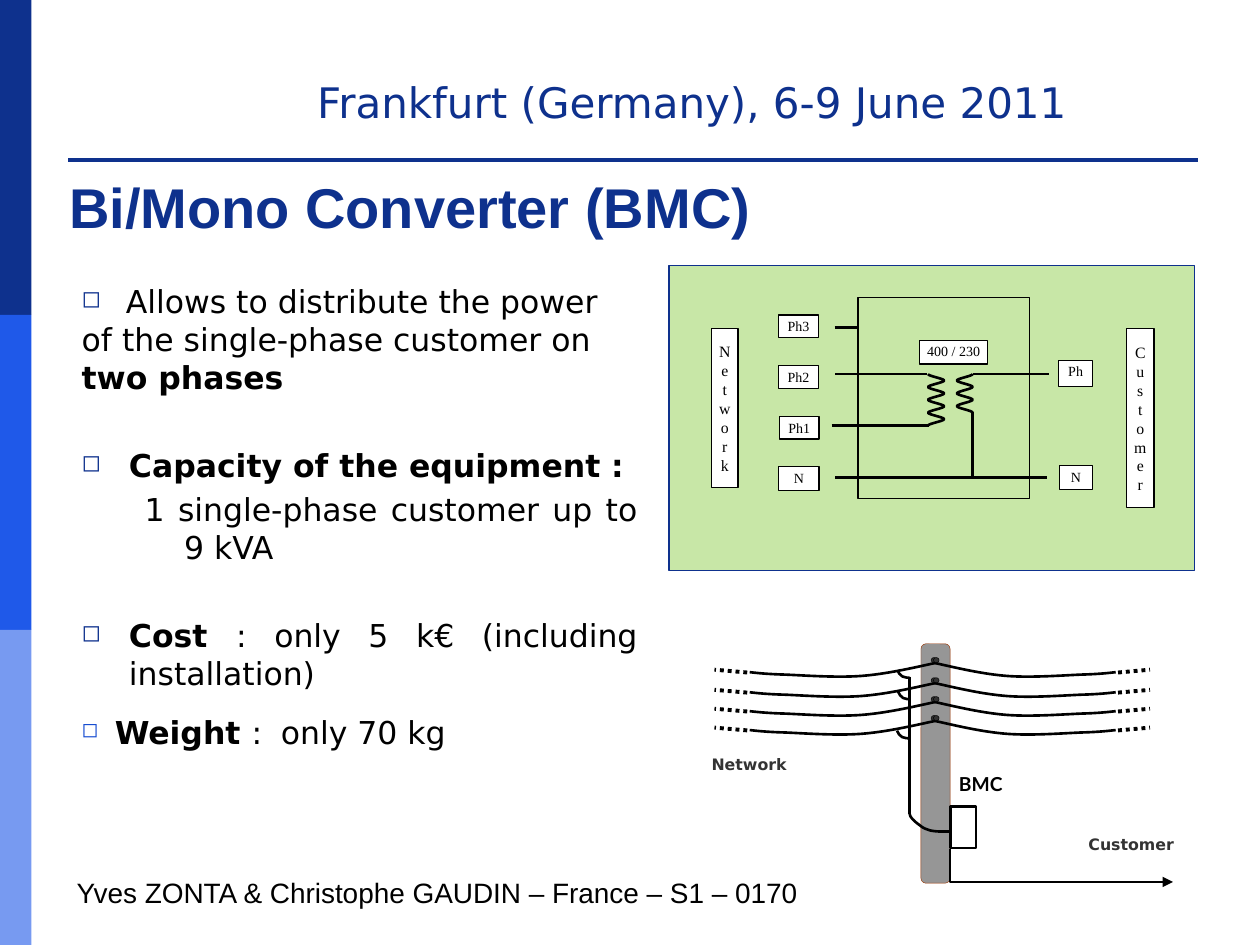
from dataclasses import dataclass

from lxml import etree
from pptx import Presentation
from pptx import util as u
from pptx.dml.color import RGBColor
from pptx.enum import dml, shapes, text
from pptx.oxml import ns

Pt = u.Pt
RECT = shapes.MSO_SHAPE.RECTANGLE
OVAL = shapes.MSO_SHAPE.OVAL
ROUNDED = shapes.MSO_SHAPE.ROUNDED_RECTANGLE


@dataclass(frozen=True)
class Theme:
    navy: str = "0E318D"
    blue: str = "1F59E9"
    sky: str = "779AF1"
    bullet: str = "154BD1"
    green: str = "92D050"
    pole: str = "969696"
    rust: str = "993300"
    dark: str = "333333"
    black: str = "000000"
    white: str = "FFFFFF"
    body_font: str = "DejaVu Sans"
    title_font: str = "Arial"
    label_font: str = "Times New Roman"
    tag_font: str = "Lato"
    title: float = 32
    header: float = 24
    body: float = 18
    footer: float = 16
    tag: float = 11
    caption: float = 9
    label: float = 8


def apply(target, values):
    for name, value in values.items():
        setattr(target, name, value)


def child(parent, tag, **attributes):
    return etree.SubElement(parent, ns.qn(tag), attributes)


def coil(x, y, width, height, turns):
    """Curve points of a winding that swings between x and x + width."""
    step = height / turns
    points = [(x, y)]
    for i in range(turns):
        near, far = (x, x + width) if i % 2 == 0 else (x + width, x)
        top = y + i * step
        points += [(near, top + step * 0.3), (far, top + step * 0.7), (far, top + step)]
    return points


class SlideBuilder:
    def __init__(self, slide, theme):
        self.slide, self.theme = slide, theme

    def outline(self, line, color, width, dash=None, arrow=False):
        line.color.rgb = RGBColor.from_string(color)
        apply(line, {"width": Pt(width), "dash_style": dash})
        if arrow:
            child(line.fill._xPr, "a:tailEnd", type="triangle")

    def run(self, paragraph, words, size, font, color, bold=False):
        run = paragraph.add_run()
        run.text = words
        apply(run.font, {"size": Pt(size), "name": font, "bold": bold})
        run.font.color.rgb = RGBColor.from_string(color)

    def box(self, bounds, fill=None, line=None, width=0.75, kind=RECT, alpha=None):
        shape = self.slide.shapes.add_shape(kind, *map(Pt, bounds))
        shape.shadow.inherit = False
        if fill:
            shape.fill.solid()
            shape.fill.fore_color.rgb = RGBColor.from_string(fill)
        else:
            shape.fill.background()
        if alpha:
            color = shape.fill._xPr.find(".//" + ns.qn("a:srgbClr"))
            child(color, "a:alpha", val=str(alpha * 1000))
        if line:
            self.outline(shape.line, line, width)
        else:
            shape.line.fill.background()
        return shape

    def label(self, bounds, words, size, font, color, line=None, bold=False,
              centered=False, stacked=False, inset=0):
        frame = self.box(bounds, self.theme.white, line).text_frame
        apply(frame, {"margin_left": Pt(inset), "margin_right": Pt(inset),
                      "margin_top": Pt(inset), "margin_bottom": Pt(inset),
                      "vertical_anchor": text.MSO_ANCHOR.TOP, "word_wrap": True})
        if stacked:
            frame._txBody.bodyPr.set("vert", "wordArtVert")
        paragraph = frame.paragraphs[0]
        paragraph.alignment = text.PP_ALIGN.CENTER if centered else text.PP_ALIGN.LEFT
        self.run(paragraph, words, size, font, color, bold)

    def text_frame(self, bounds, anchor=text.MSO_ANCHOR.TOP):
        frame = self.slide.shapes.add_textbox(*map(Pt, bounds)).text_frame
        apply(frame, {"word_wrap": True, "vertical_anchor": anchor})
        return frame

    def paragraph(self, paragraph, runs, before=0, margin=0, indent=0, tabs=(),
                  bullet=None, bullet_size=75, justify=False):
        properties = paragraph._p.get_or_add_pPr()
        for name, value in {"marL": margin, "indent": indent}.items():
            properties.set(name, str(Pt(value)))
        if bullet:
            child(child(properties, "a:buClr"), "a:srgbClr", val=bullet)
            child(properties, "a:buSzPct", val=str(bullet_size * 1000))
            child(properties, "a:buChar", char="◻")
        if tabs:
            stops = child(properties, "a:tabLst")
            for tab in tabs:
                child(stops, "a:tab", pos=str(Pt(tab)), algn="l")
        apply(paragraph, {"space_before": Pt(before), "alignment":
                          text.PP_ALIGN.JUSTIFY if justify else text.PP_ALIGN.LEFT})
        for words, bold in runs:
            self.run(paragraph, words, self.theme.body, self.theme.body_font,
                     self.theme.black, bold)

    def rule_table(self, bounds, color, width):
        """One empty cell with only a bottom border."""
        table = self.slide.shapes.add_table(1, 1, *map(Pt, bounds)).table
        apply(table, {"first_row": False, "horz_banding": False})
        cell = table.cell(0, 0)
        apply(cell, {"margin_top": 0, "margin_bottom": 0})
        child(cell.text_frame.paragraphs[0]._p, "a:endParaRPr", sz="800")
        properties = cell._tc.get_or_add_tcPr()
        for side in ("a:lnL", "a:lnR", "a:lnT"):
            child(child(properties, side), "a:noFill")
        bottom = child(properties, "a:lnB", w=str(Pt(width)))
        child(child(bottom, "a:solidFill"), "a:srgbClr", val=color)
        cell.fill.background()

    def line(self, start, end, width=1.5, dash=None):
        connector = self.slide.shapes.add_connector(
            shapes.MSO_CONNECTOR.STRAIGHT, *map(Pt, start + end))
        child(connector._element.spPr, "a:effectLst")
        self.outline(connector.line, self.theme.black, width, dash)

    def outline_path(self, points, curved=True, arrow=False):
        points = [(Pt(x), Pt(y)) for x, y in points]
        builder = self.slide.shapes.build_freeform(*points[0])
        builder.add_line_segments(points[1:], close=False)
        shape = builder.convert_to_shape()
        shape.shadow.inherit = False
        shape.fill.background()
        self.outline(shape.line, self.theme.black, 1.5, arrow=arrow)
        if curved:  # every three segments become one cubic curve
            segments = list(shape._element.iter(ns.qn("a:lnTo")))
            for i in range(0, len(segments), 3):
                curve = child(segments[i].getparent(), "a:cubicBezTo")
                for segment in segments[i:i + 3]:
                    curve.append(segment[0])
                    segment.getparent().remove(segment)


def add_frame(page, theme):
    # Side bands, rule, header, title and footer
    for i, color in enumerate((theme.navy, theme.blue, theme.sky)):
        page.box((0, 180 * i, 18, 180), color)
    page.rule_table((39, 77, 645.4, 14.4), theme.navy, 2.25)
    for bounds, words, size, font, color, bold in (
            ((174.2, 40.3, 474, 36), "Frankfurt (Germany), 6-9 June 2011",
             theme.header, theme.body_font, theme.navy, False),
            ((32.4, 94.3, 648, 46.8), "Bi/Mono Converter (BMC)",
             theme.title, theme.title_font, theme.navy, True),
            ((36.7, 496.8, 567, 26.6), "Yves ZONTA & Christophe GAUDIN – France – S1 – 0170",
             theme.footer, theme.title_font, theme.black, False)):
        frame = page.text_frame(bounds, text.MSO_ANCHOR.MIDDLE)
        page.run(frame.paragraphs[0], words, size, font, color, bold)


def add_body(page, theme):
    # Bulleted text
    frame = page.text_frame((39.6, 157.7, 331.9, 336.2))
    hanging = {"margin": 27, "indent": -27, "bullet": theme.navy,
               "before": 28.8, "justify": True}
    items = (
        ([("\tAllows to distribute the power of the single-phase customer on ", False),
          ("two phases", True)], {"bullet": theme.navy, "tabs": (25.2,)}),
        ([("Capacity of the equipment :", True)], hanging),
        ([("1 single-phase customer up to 9 kVA", False)],
         {"margin": 58.5, "indent": -22.5, "before": 3.6, "justify": True}),
        ([("Cost ", True), (": only 5 k€ (including installation)", False)], hanging),
        ([("\tWeight ", True), (":\tonly 70 kg", False)],
         {"bullet": theme.bullet, "bullet_size": 65, "tabs": (18.9, 113.8), "before": 12}))
    for i, (runs, style) in enumerate(items):
        paragraph = frame.add_paragraph() if i else frame.paragraphs[0]
        page.paragraph(paragraph, runs, **style)


def add_circuit(page, theme):
    # Converter circuit on its green panel
    page.box((382.3, 151.9, 300.2, 174.2), theme.green, theme.navy, alpha=50)
    page.box((490.3, 169.9, 98, 115.2), line=theme.black)
    for start, end in (((476.9, 187.2), (489.8, 187.2)), ((477.4, 213.8), (530, 213.8)),
                       ((555.8, 213.8), (599.2, 213.8)), ((475.2, 243.2), (530.6, 243.2)),
                       ((477.4, 272.9), (598.3, 272.9)), ((555.8, 235.4), (555.8, 272.2))):
        page.line(start, end)
    page.outline_path(coil(530.3, 213.8, 9.2, 29.4, 8))
    page.outline_path(coil(555.8, 213.8, -9, 22, 6))
    style = {"font": theme.label_font, "color": theme.black, "line": theme.black,
             "centered": True, "inset": 1.44}
    for bounds, words in (((445, 180, 22.7, 13), "Ph3"), ((445, 209, 22.7, 13), "Ph2"),
                          ((445.4, 238.2, 22.6, 12.6), "Ph1"), ((445, 266.6, 23, 13.7), "N"),
                          ((605, 205.9, 19.4, 15.1), "Ph"), ((605.5, 266.2, 18.7, 13.7), "N"),
                          ((525.6, 194.4, 38.9, 13.7), "400 / 230")):
        page.label(bounds, words, theme.label, **style)
    for bounds, words in (((406.6, 187.9, 15.1, 90.7), "Network"),
                          ((643.7, 187.9, 15.8, 102.2), "Customer")):
        page.label(bounds, words, theme.caption, stacked=True, **style)


def add_pole(page, theme):
    # Pole with four overhead wires
    pole = page.box((526.3, 367.9, 16.6, 136.8), theme.pole, theme.rust, 0.25, ROUNDED)
    pole.adjustments[0] = 0.17
    sag = ((0, 0), (14.4, 3.2), (28.8, 6.5), (43.2, 7.6), (57.6, 8.6), (76.3, 7.2),
           (86.4, 6.8), (97.2, 6.5), (103, 5.8), (106.6, 5.4))
    sides = ((535, -1, -2.9), (533.6, 0.975, -0.2))
    for peak_y in (378.7, 390.2, 401, 411.8):
        for peak_x, scale, knob in sides:
            page.outline_path([(peak_x + scale * x, peak_y + y) for x, y in sag])
            page.line((peak_x + scale * 108, peak_y + 5.6),
                      (peak_x + scale * 126.7, peak_y + 4),
                      width=2.25, dash=dml.MSO_LINE.ROUND_DOT)
            page.box((peak_x + knob, peak_y - 2.9, 3.2, 2.9),
                     theme.dark, theme.black, 0.25, OVAL)

    # Taps, down lead and converter box
    tap = ((0, 0), (0.7, 1.4), (1.4, 2.9), (2.9, 3.6), (4.3, 4.3), (6.3, 4.3), (7, 4.3))
    for left, top in ((512.8, 383), (513.2, 395.3), (512.6, 417.6)):
        page.outline_path([(left + x, top + y) for x, y in tap[:1] + tap[1:]])
    page.outline_path([(519.8, 386.6), (519.8, 465.1)], curved=False)
    page.outline_path([(519.8, 465.1), (520, 467), (522, 469), (525.6, 471.6),
                       (529, 474.5), (533, 475.2), (538.6, 475.2)])
    page.line((537.1, 475.2), (542.2, 475.2))
    page.box((543.1, 460.8, 14.6, 23.8), theme.white, theme.black, 1.5)
    page.outline_path([(542.9, 485.3), (542.9, 504), (670.3, 504)], curved=False, arrow=True)

    # Captions
    page.label((546.8, 440.2, 35.3, 13.7), "BMC", theme.tag, theme.tag_font, theme.black,
               bold=True, inset=1.2)
    for bounds, words in (((622, 476.8, 57.6, 14.4), "Customer"),
                          ((406.6, 431.3, 49.7, 15.1), "Network")):
        page.label(bounds, words, theme.caption, theme.body_font, theme.dark, bold=True)


def main():
    presentation = Presentation()
    apply(presentation, {"slide_width": Pt(720), "slide_height": Pt(540)})
    slide = presentation.slides.add_slide(presentation.slide_layouts[6])
    theme = Theme()
    page = SlideBuilder(slide, theme)
    for add_part in (add_frame, add_body, add_circuit, add_pole):
        add_part(page, theme)
    presentation.save("out.pptx")


if __name__ == "__main__":
    main()
